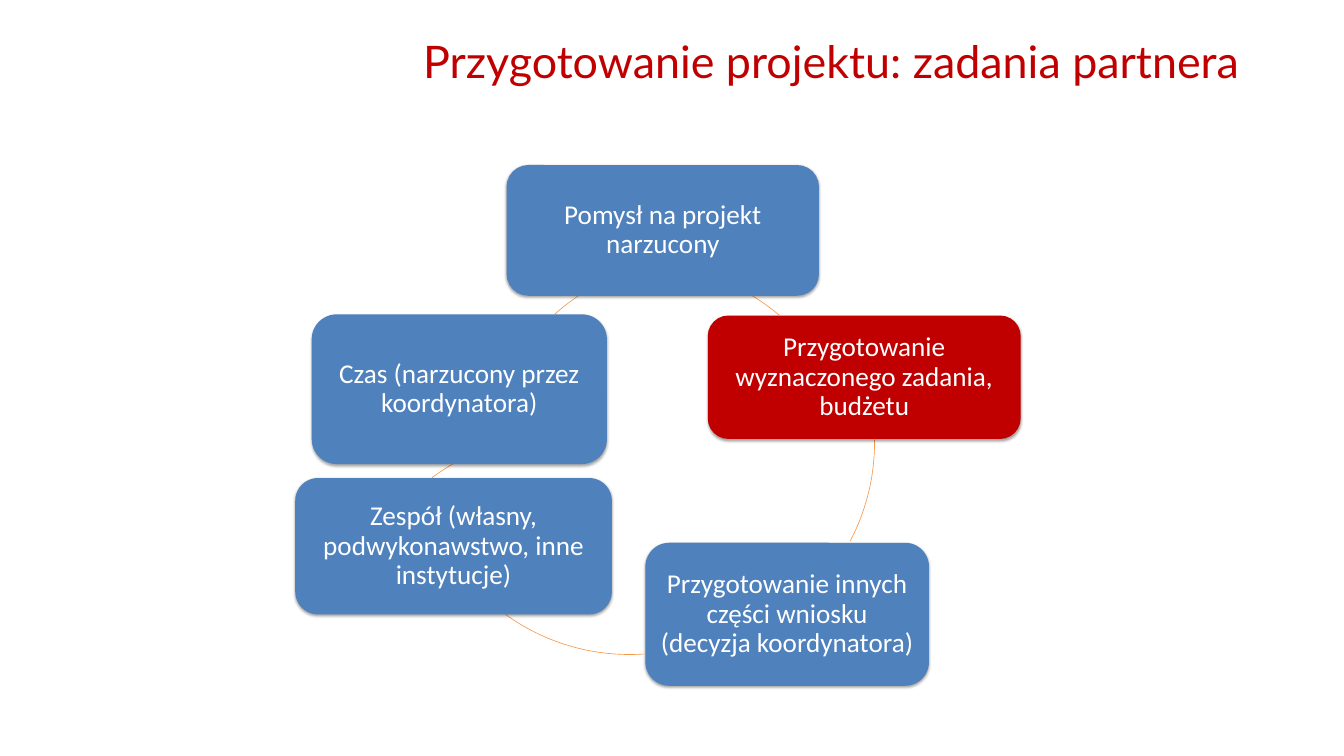
from lxml import etree
from pptx import Presentation
from pptx.dml.color import RGBColor
from pptx.enum import shapes, text
from pptx.oxml.ns import qn
from pptx.util import Pt

BLUE, RED, ORANGE, WHITE = "4F81BD", "C00000", "F79646", "FFFFFF"
CIRCLE = 499.7

# Label, fill, offset and size within the cycle
STEPS = [
    ("Pomysł na projekt narzucony", BLUE, (249, 0, 368, 154)),
    ("Przygotowanie wyznaczonego zadania, budżetu", RED, (486, 177.3, 368.6, 145.4)),
    ("Przygotowanie innych części wniosku (decyzja koordynatora)", BLUE,
     (412.5, 445, 334.1, 168.5)),
    ("Zespół (własny, podwykonawstwo, inne instytucje)", BLUE, (0, 368.8, 373, 160.6)),
    ("Czas (narzucony przez koordynatora)", BLUE, (19.4, 175.9, 347.8, 176.4)),
]
# Offset of the circle within the cycle, start and end angle in degrees
ARCS = [
    (158.4, 117.4, 301.5, 310.4),
    (182.8, 77, 359.3, 27.8),
    (144, 77, 86.2, 125.8),
    (60.4, 319, 233.4, 240.1),
    (223.2, 111.6, 228, 236),
]


def color(hex_string):
    return RGBColor.from_string(hex_string)


def write(paragraph, words, font, size, hex_string):
    run = paragraph.add_run()
    run.text = words
    run.font.name = font
    run.font.size = Pt(size)
    run.font.color.rgb = color(hex_string)


def add_soft_shadow(shape):
    shape.shadow.inherit = False
    effects = shape._element.spPr.find(qn("a:effectLst"))
    shadow = etree.SubElement(effects, qn("a:outerShdw"), blurRad=str(Pt(3.1)),
                              dist=str(Pt(1.8)), dir="5400000", rotWithShape="0")
    black = etree.SubElement(shadow, qn("a:srgbClr"), val="000000")
    etree.SubElement(black, qn("a:alpha"), val="35000")


def add_title(slide, left, top, width, height):
    heading = slide.shapes.add_textbox(Pt(left), Pt(top), Pt(width), Pt(height))
    frame = heading.text_frame
    frame.word_wrap = True
    frame.vertical_anchor = text.MSO_ANCHOR.MIDDLE
    frame.margin_right = Pt(85)
    paragraph = frame.paragraphs[0]
    paragraph.alignment = text.PP_ALIGN.RIGHT
    write(paragraph, "Przygotowanie projektu: zadania partnera", "Lato", 52.8, RED)


def add_step(slide, label, fill, left, top, width, height):
    step = slide.shapes.add_shape(shapes.MSO_SHAPE.ROUNDED_RECTANGLE,
                                  Pt(left), Pt(top), Pt(width), Pt(height))
    step.fill.solid()
    step.fill.fore_color.rgb = color(fill)
    step.line.fill.background()
    add_soft_shadow(step)
    frame = step.text_frame
    frame.word_wrap = True
    frame.vertical_anchor = text.MSO_ANCHOR.MIDDLE
    frame.margin_left = frame.margin_right = Pt(9.6)
    frame.margin_top = frame.margin_bottom = Pt(9.6)
    paragraph = frame.paragraphs[0]
    paragraph.alignment = text.PP_ALIGN.CENTER
    paragraph.line_spacing = 0.9
    write(paragraph, label, "Calibri", 32, WHITE)


def add_arc(slide, left, top, start, end):
    arc = slide.shapes.add_shape(shapes.MSO_SHAPE.ARC, Pt(left), Pt(top),
                                 Pt(CIRCLE), Pt(CIRCLE))
    # Angles are stored in 60000ths of a degree, adjustments in 100000ths
    arc.adjustments[0] = start * 0.6
    arc.adjustments[1] = end * 0.6
    arc.fill.background()
    arc.line.color.rgb = color(ORANGE)
    arc.line.width = Pt(0.75)
    arc.shadow.inherit = False


def add_cycle(slide, left, top):
    for x, y, start, end in ARCS:
        add_arc(slide, left + x, top + y, start, end)
    for label, fill, (x, y, width, height) in STEPS:
        add_step(slide, label, fill, left + x, top + y, width, height)


def main():
    deck = Presentation()
    deck.slide_width, deck.slide_height = Pt(1583.3), Pt(890.6)
    slide = deck.slides.add_slide(deck.slide_layouts[6])
    add_title(slide, 126.7, 18, 1417.7, 107.3)
    add_cycle(slide, 347.8, 194.4)
    deck.save("out.pptx")


if __name__ == "__main__":
    main()
